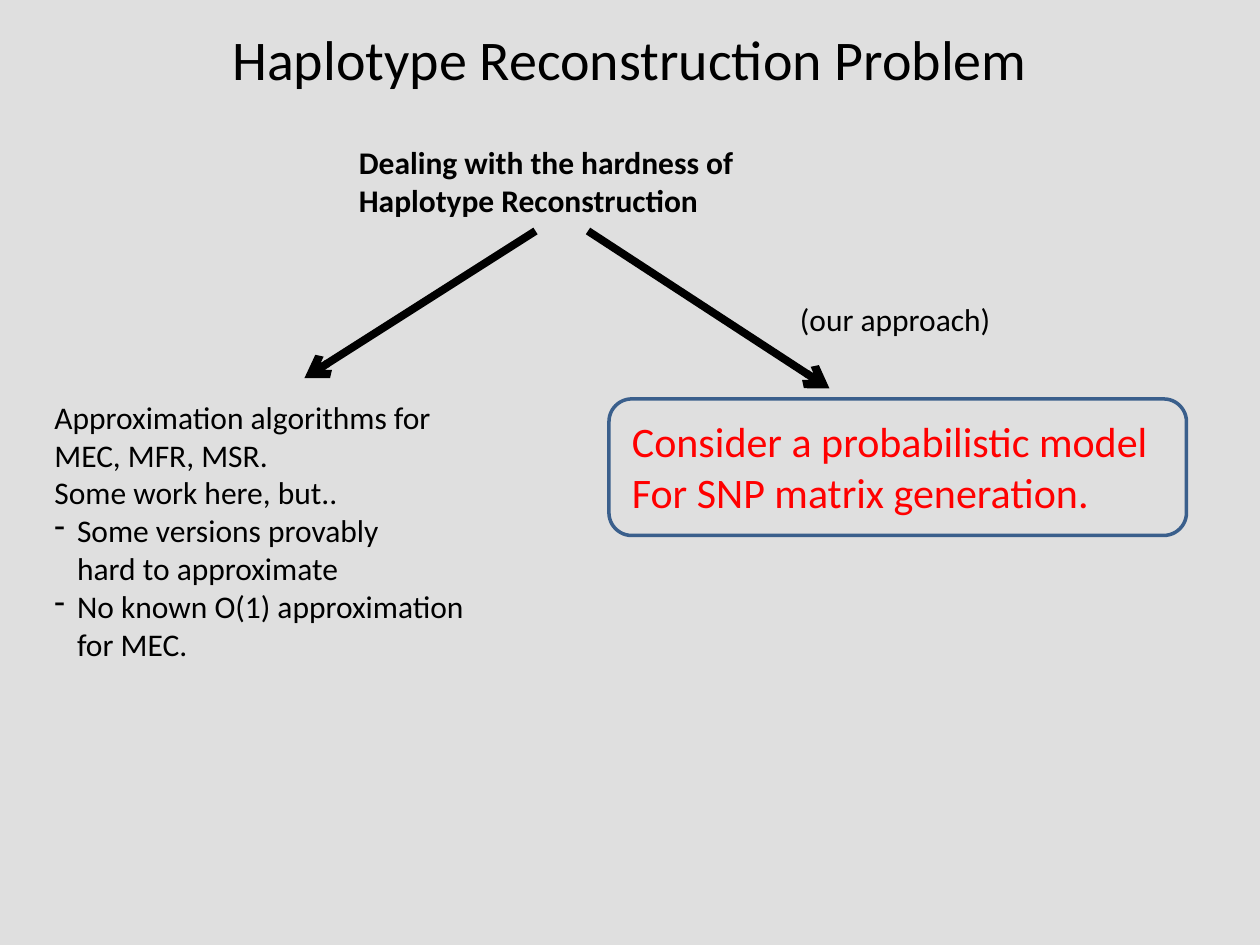
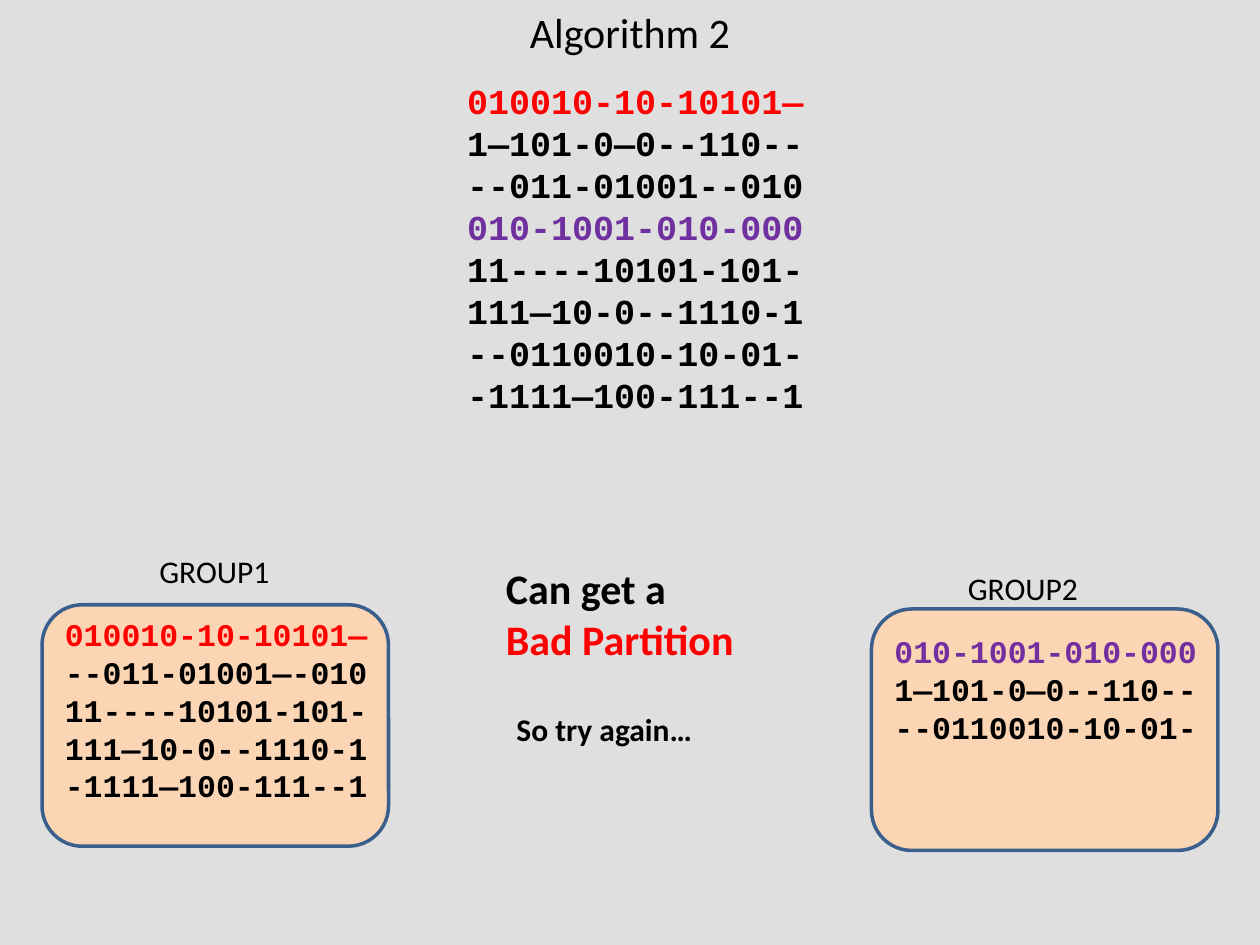
import pptx
import pptx.dml.color
import pptx.enum.shapes
import pptx.enum.text
import pptx.oxml.ns
import pptx.util
from lxml import etree

# Grid of 120 columns by 90 rows over a 10 x 7.5 inch slide
COLUMNS, ROWS = 120, 90
WIDTH, HEIGHT = pptx.util.Inches(10), pptx.util.Inches(7.5)

COLORS = {
    "background": "DFDFDF",
    "text": "000000",
    "accent": "FF0000",
    "second": "7030A0",
    "outline": "3A5F8C",
    "group": "FCD5B5",
}
BODY = {"name": "Calibri", "size": 18, "bold": False}
STRONG = BODY | {"bold": True}
LARGE = BODY | {"size": 24}
CODE = {"name": "Courier New", "size": 18, "bold": True}


def color(name):
    return pptx.dml.color.RGBColor.from_string(COLORS[name])


def place(column, row, columns=0, rows=0):
    """Turn grid units into slide lengths."""
    return (round(column * WIDTH / COLUMNS), round(row * HEIGHT / ROWS),
            round(columns * WIDTH / COLUMNS), round(rows * HEIGHT / ROWS))


def format_paragraph(paragraph, style, color_name="text"):
    values = style | {"size": pptx.util.Pt(style["size"])}
    for run in paragraph.runs:
        for attribute, value in values.items():
            setattr(run.font, attribute, value)
        run.font.color.rgb = color(color_name)


def add_dash(paragraph):
    """Give a paragraph a dash bullet with a hanging indent."""
    properties = paragraph._p.get_or_add_pPr()
    indent = pptx.util.Inches(0.18)
    properties.set("marL", str(indent))
    properties.set("indent", str(-indent))
    bullet = etree.SubElement(properties, pptx.oxml.ns.qn("a:buChar"))
    bullet.set("char", "-")


def add_lines(slide, box, lines, style=BODY, colors=None, dashed=()):
    """Add a text box; colors and dashed refer to line numbers."""
    frame = slide.shapes.add_textbox(*place(*box)).text_frame
    frame.word_wrap = True
    frame.margin_right = 0
    for number, line in enumerate(lines):
        paragraph = frame.add_paragraph() if number else frame.paragraphs[0]
        paragraph.text = line
        format_paragraph(paragraph, style, (colors or {}).get(number, "text"))
        if number in dashed:
            add_dash(paragraph)


def add_round_box(slide, box, fill=None):
    shape = slide.shapes.add_shape(
        pptx.enum.shapes.MSO_SHAPE.ROUNDED_RECTANGLE, *place(*box))
    shape.shadow.inherit = False
    if fill:
        shape.fill.solid()
        shape.fill.fore_color.rgb = color(fill)
    else:
        shape.fill.background()
    shape.line.color.rgb = color("outline")
    shape.line.width = pptx.util.Pt(2)


def add_arrow(slide, start, end):
    connector = slide.shapes.add_connector(
        pptx.enum.shapes.MSO_CONNECTOR.STRAIGHT,
        *place(*start)[:2], *place(*end)[:2])
    connector.line.color.rgb = color("text")
    connector.line.width = pptx.util.Pt(4.5)
    tail = etree.SubElement(connector.line._get_or_add_ln(),
                            pptx.oxml.ns.qn("a:tailEnd"))
    tail.set("type", "arrow")
    etree.SubElement(connector._element.spPr, pptx.oxml.ns.qn("a:effectLst"))


def add_titled_slide(presentation, text, rows, size):
    slide = presentation.slides.add_slide(presentation.slide_layouts[5])
    title = slide.shapes.title
    title.left, title.top, title.width, title.height = place(
        0, 0, COLUMNS, rows)
    title.text_frame.text = text
    title.text_frame.vertical_anchor = pptx.enum.text.MSO_ANCHOR.MIDDLE
    paragraph = title.text_frame.paragraphs[0]
    paragraph.alignment = pptx.enum.text.PP_ALIGN.CENTER
    format_paragraph(paragraph, BODY | {"size": size})
    return slide


def add_approach(slide, column, row):
    """Outlined proposal with its label above."""
    add_lines(slide, (column + 1, row + 1, 52, 11),
              ["Consider a probabilistic model", "For SNP matrix generation."],
              LARGE, {0: "accent", 1: "accent"})
    add_round_box(slide, (column, row, 55, 13))
    add_lines(slide, (column + 17, row - 10, 21, 5), ["(our approach)"])


def build_problem_slide(presentation):
    slide = add_titled_slide(
        presentation, "Haplotype Reconstruction Problem", 11, 32)
    add_lines(slide, (33, 13, 38.5, 8.5),
              ["Dealing with the hardness of", "Haplotype Reconstruction"],
              STRONG)
    # Two branches
    add_arrow(slide, (51, 22), (29, 36))
    add_arrow(slide, (56, 22), (79, 37))
    add_lines(slide, (4, 37.3, 42, 26.6),
              ["Approximation algorithms for", "MEC, MFR, MSR.",
               "Some work here, but..",
               "Some versions provably\vhard to approximate",
               "No known O(1) approximation\vfor MEC."],
              dashed=(3, 4))
    add_approach(slide, 58, 38)


def add_group(slide, column, row, name, name_offset, reads, reads_row, lead):
    """Filled box of reads with its name above; the first read leads."""
    add_round_box(slide, (column, row, 33, 23), "group")
    across, up = name_offset
    add_lines(slide, (column + across, row - up, 13, 5), [name])
    add_lines(slide, (column + 1, row + reads_row, 31.4, 19.4),
              reads, CODE, {0: lead})


def build_algorithm_slide(presentation):
    slide = add_titled_slide(presentation, "Algorithm 2", 6, 24)
    matrix = ["010010-10-10101—", "1—101-0—0--110--", "--011-01001--010",
              "010-1001-010-000", "11----10101-101-", "111—10-0--1110-1",
              "--0110010-10-01-", "-1111—100-111--1"]
    add_lines(slide, (43.3, 7, 34.7, 33.5), matrix, CODE | {"size": 20},
              {0: "accent", 3: "second"})
    # Partition of the reads
    first_group = [matrix[0], "--011-01001—-010",
                   matrix[4], matrix[5], matrix[7]]
    second_group = [matrix[3], matrix[1], matrix[6]]
    add_group(slide, 4, 57.6, "GROUP1", (10, 5.6), first_group, 0.4, "accent")
    add_group(slide, 83, 58, "GROUP2", (8, 4.4), second_group, 1.6, "second")
    # Verdict
    add_lines(slide, (47, 53, 24.4, 11), ["Can get a", "Bad Partition"],
              LARGE | {"bold": True}, {1: "accent"})
    add_lines(slide, (48, 67, 19.6, 5), ["So try again…"], STRONG)


def main():
    presentation = pptx.Presentation()
    presentation.slide_width, presentation.slide_height = WIDTH, HEIGHT
    background = presentation.slide_master.background.fill
    background.solid()
    background.fore_color.rgb = color("background")
    build_problem_slide(presentation)
    build_algorithm_slide(presentation)
    presentation.save("out.pptx")


if __name__ == "__main__":
    main()
